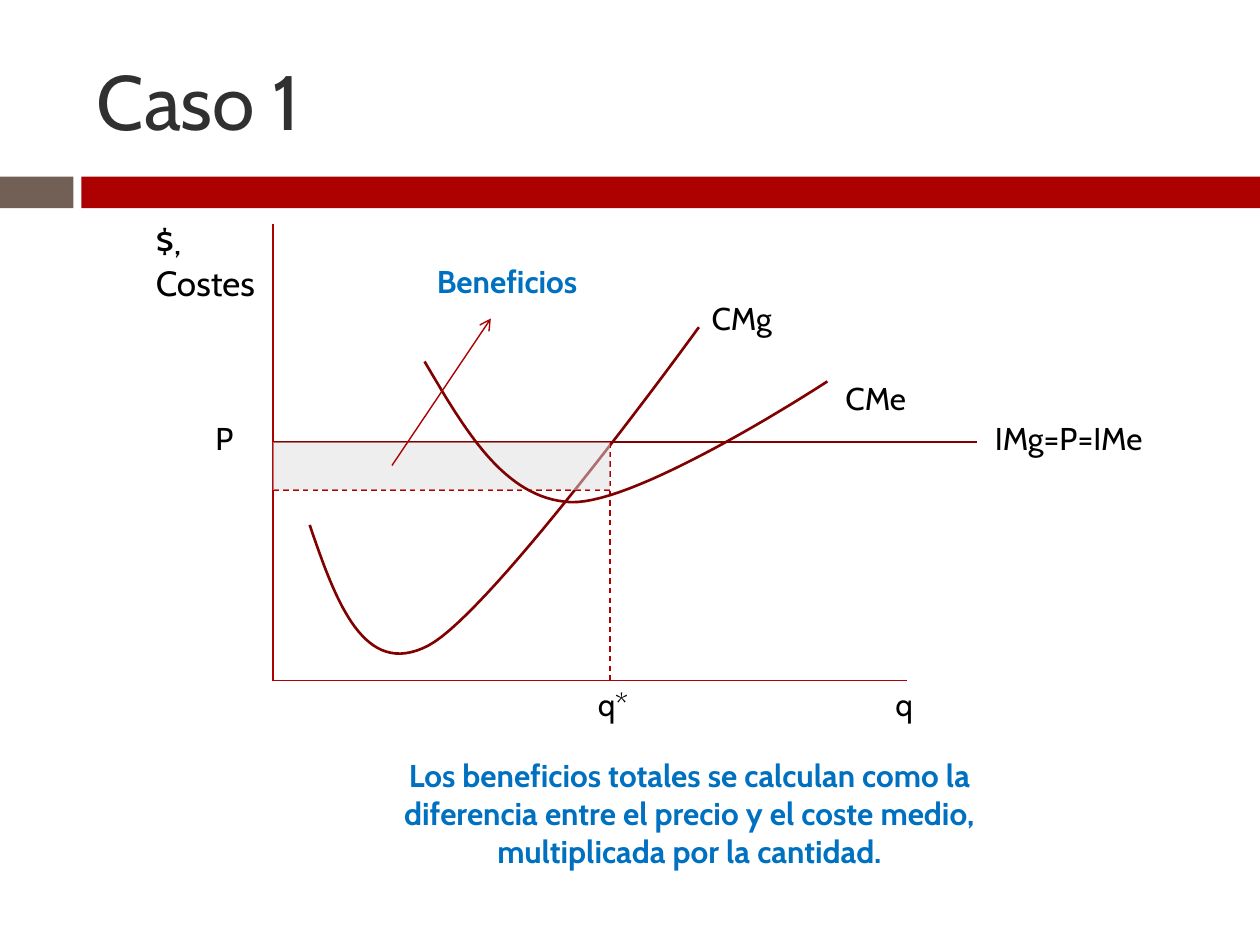
import lxml.etree
import pptx
import pptx.dml.color
import pptx.enum.dml
import pptx.enum.shapes
import pptx.enum.text
import pptx.oxml.ns
import pptx.util

Pt = pptx.util.Pt
RGBColor = pptx.dml.color.RGBColor
PP_ALIGN = pptx.enum.text.PP_ALIGN
ANCHOR = pptx.enum.text.MSO_ANCHOR
RECTANGLE = pptx.enum.shapes.MSO_SHAPE.RECTANGLE
qn = pptx.oxml.ns.qn

FONT = "Cabin"
BLACK = RGBColor(0x00, 0x00, 0x00)
CHARCOAL = RGBColor(0x30, 0x30, 0x30)
BROWN = RGBColor(0x72, 0x60, 0x56)
RED = RGBColor(0xAD, 0x01, 0x01)
DARK_RED = RGBColor(0x80, 0x01, 0x01)
BLUE = RGBColor(0x00, 0x70, 0xC0)
GRAY = RGBColor(0xDE, 0xDE, 0xE0)

THIN, THICK = 0.79, 1.5
LABEL_HEIGHT = 29
CURVE_STEPS = 32


def write_text(shape, text, size=18, color=BLACK, bold=False,
               align=PP_ALIGN.LEFT, anchor=ANCHOR.TOP):
    """Fill a shape with one formatted paragraph."""
    frame = shape.text_frame
    frame.word_wrap = True
    frame.vertical_anchor = anchor
    para = frame.paragraphs[0]
    para.alignment = align
    span = para.add_run()
    span.text = text
    span.font.name = FONT
    span.font.size = Pt(size)
    span.font.bold = bold
    span.font.color.rgb = color


def add_label(page, text, left, top, width, height=LABEL_HEIGHT, **style):
    """Add a text box."""
    box = page.shapes.add_textbox(Pt(left), Pt(top), Pt(width), Pt(height))
    write_text(box, text, **style)


def add_block(page, left, top, width, height, color, opacity=100):
    """Add a filled rectangle without outline."""
    block = page.shapes.add_shape(RECTANGLE, Pt(left), Pt(top), Pt(width), Pt(height))
    block.shadow.inherit = False
    block.fill.solid()
    block.fill.fore_color.rgb = color
    block.line.fill.background()
    if opacity < 100:
        tint = block.fill._xPr.find(".//" + qn("a:srgbClr"))
        lxml.etree.SubElement(tint, qn("a:alpha"), val=str(opacity * 1000))


def add_line(page, start, end, color=RED, weight=THIN, dashed=False, arrow=False):
    """Add a straight line, optionally dashed or with an arrowhead at its end."""
    line = page.shapes.add_connector(
        pptx.enum.shapes.MSO_CONNECTOR.STRAIGHT, *(Pt(value) for value in (*start, *end)))
    line.line.color.rgb = color
    line.line.width = Pt(weight)
    if dashed:
        line.line.dash_style = pptx.enum.dml.MSO_LINE.DASH
    if arrow:
        lxml.etree.SubElement(line.line._get_or_add_ln(), qn("a:tailEnd"), type="arrow")
    lxml.etree.SubElement(line._element.spPr, qn("a:effectLst"))


def bezier_point(controls, t):
    """Return the point at parameter t of a cubic curve."""
    weights = ((1 - t) ** 3, 3 * t * (1 - t) ** 2, 3 * t ** 2 * (1 - t), t ** 3)
    return tuple(sum(w * point[axis] for w, point in zip(weights, controls))
                 for axis in (0, 1))


def add_curve(page, knots):
    """Draw a smooth cost curve through two joined cubic segments."""
    points = [knots[0]]
    for first in (0, 3):
        points += [bezier_point(knots[first:first + 4], step / CURVE_STEPS)
                   for step in range(1, CURVE_STEPS + 1)]
    points = [(Pt(x), Pt(y)) for x, y in points]
    builder = page.shapes.build_freeform(*points[0])
    builder.add_line_segments(points[1:], close=False)
    curve = builder.convert_to_shape()
    curve.shadow.inherit = False
    curve.fill.background()
    curve.line.color.rgb = DARK_RED
    curve.line.width = Pt(THICK)


def build_header(page, left, top, width):
    """Place the title and the two-part band below it."""
    add_block(page, left, top + 101, 42, 18, BROWN)
    add_block(page, left + 46.5, top + 101, width - 46.5, 18, RED)
    title = page.shapes.title
    title.left, title.top = Pt(left + 48), Pt(top + 18)
    title.width, title.height = Pt(642), Pt(78)
    write_text(title, "Caso 1", size=44, color=CHARCOAL, anchor=ANCHOR.MIDDLE)


def build_graph(page, left, top, width, height):
    """Draw the cost curves, price line and profit area on their axes."""
    def at(x, y):
        return left + x, top + y

    price, cost, quantity = 124.6, 152, 192.5
    marginal = [(21, 172), (36, 216), (52, 260), (88.7, 241),
                (125.4, 222), (243.4, 59), (243.4, 59)]
    average = [(86.6, 78.6), (109.6, 117.5), (132, 157), (170, 159),
               (209, 160.6), (316.8, 90), (316.8, 90)]

    add_line(page, at(0, 0), at(0, height))
    add_line(page, at(0, height), at(width, height))
    add_curve(page, [at(*knot) for knot in marginal])
    add_line(page, at(402.5, price), at(0, price), color=DARK_RED, weight=THICK)
    add_line(page, at(quantity, price), at(quantity, height), dashed=True)
    add_line(page, at(quantity, cost), at(0, cost), dashed=True)
    add_block(page, *at(0, price), quantity, cost - price, GRAY, opacity=50)
    add_curve(page, [at(*knot) for knot in average])
    add_line(page, at(68, 138), at(124.5, 54), arrow=True)

    add_label(page, "$, Costes", *at(-74, -6), 79, 55, size=20)
    add_label(page, "Beneficios", *at(86.5, 18), 96, color=BLUE, bold=True)
    for text, x, y, label_width in (
            ("CMg", 243.5, 39.5, 76),
            ("CMe", 320, 85, 76),
            ("P", -40, price - 16.5, 61),
            ("IMg=P=IMe", 405.5, price - 16.5, 111),
            ("q*", 178.5, height - 1, 48),
            ("q", 348.5, height - 1, 76)):
        add_label(page, text, *at(x, y), label_width)


def build_conclusion(page, left, top, width, height):
    """Place the closing sentence under the graph."""
    add_label(page, "Los beneficios totales se calculan como la diferencia entre "
              "el precio y el coste medio, multiplicada por la cantidad.",
              left, top, width, height, color=BLUE, bold=True, align=PP_ALIGN.CENTER)


def main():
    """Build the deck and save it."""
    deck = pptx.Presentation()
    deck.slide_width, deck.slide_height = Pt(720), Pt(540)
    page = deck.slides.add_slide(deck.slide_layouts.get_by_name("Title Only"))
    build_header(page, 0, 0, 720)
    build_graph(page, 156, 128, 362.5, 261)
    build_conclusion(page, 212.5, 428.5, 363, 73)
    deck.save("out.pptx")


if __name__ == "__main__":
    main()
